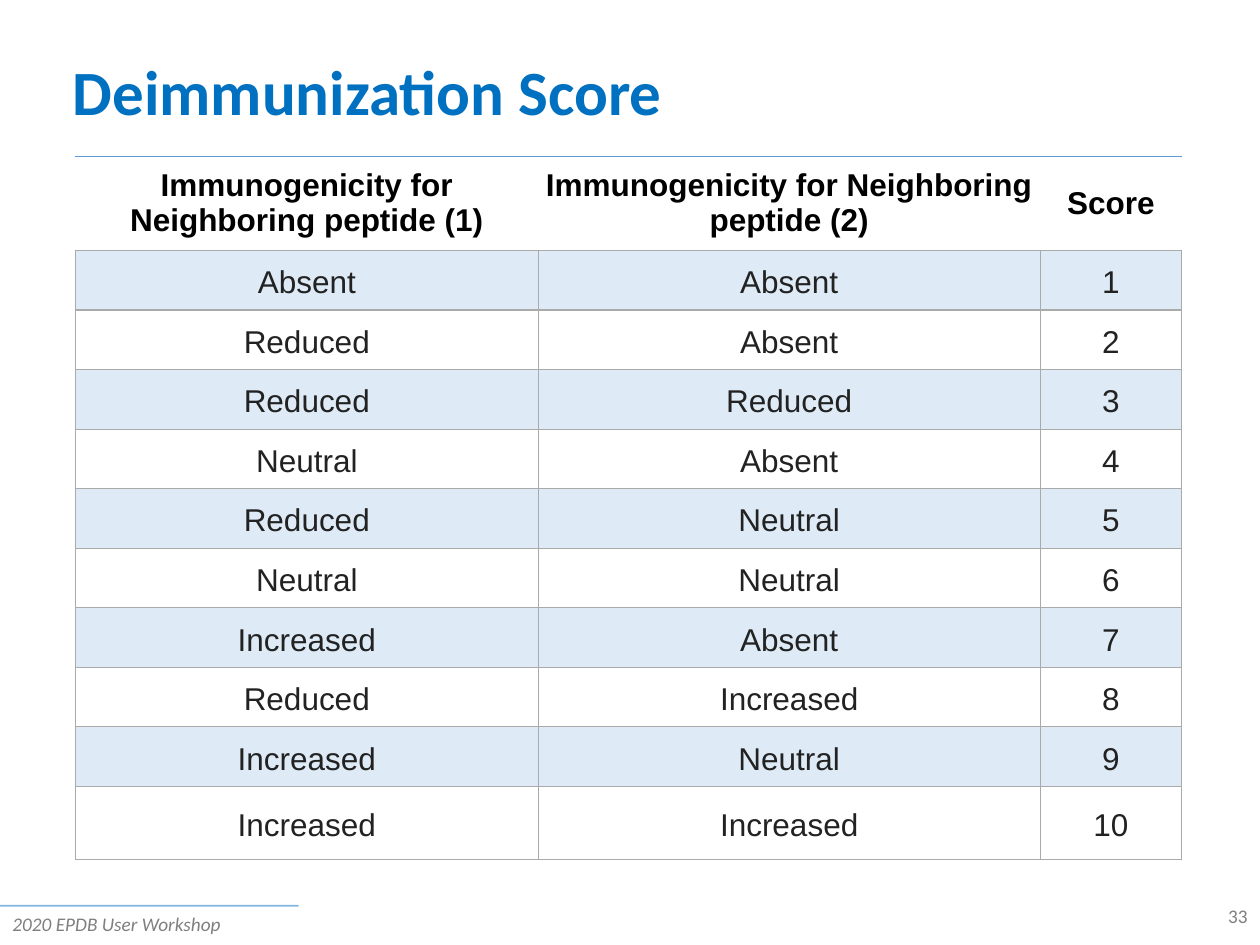
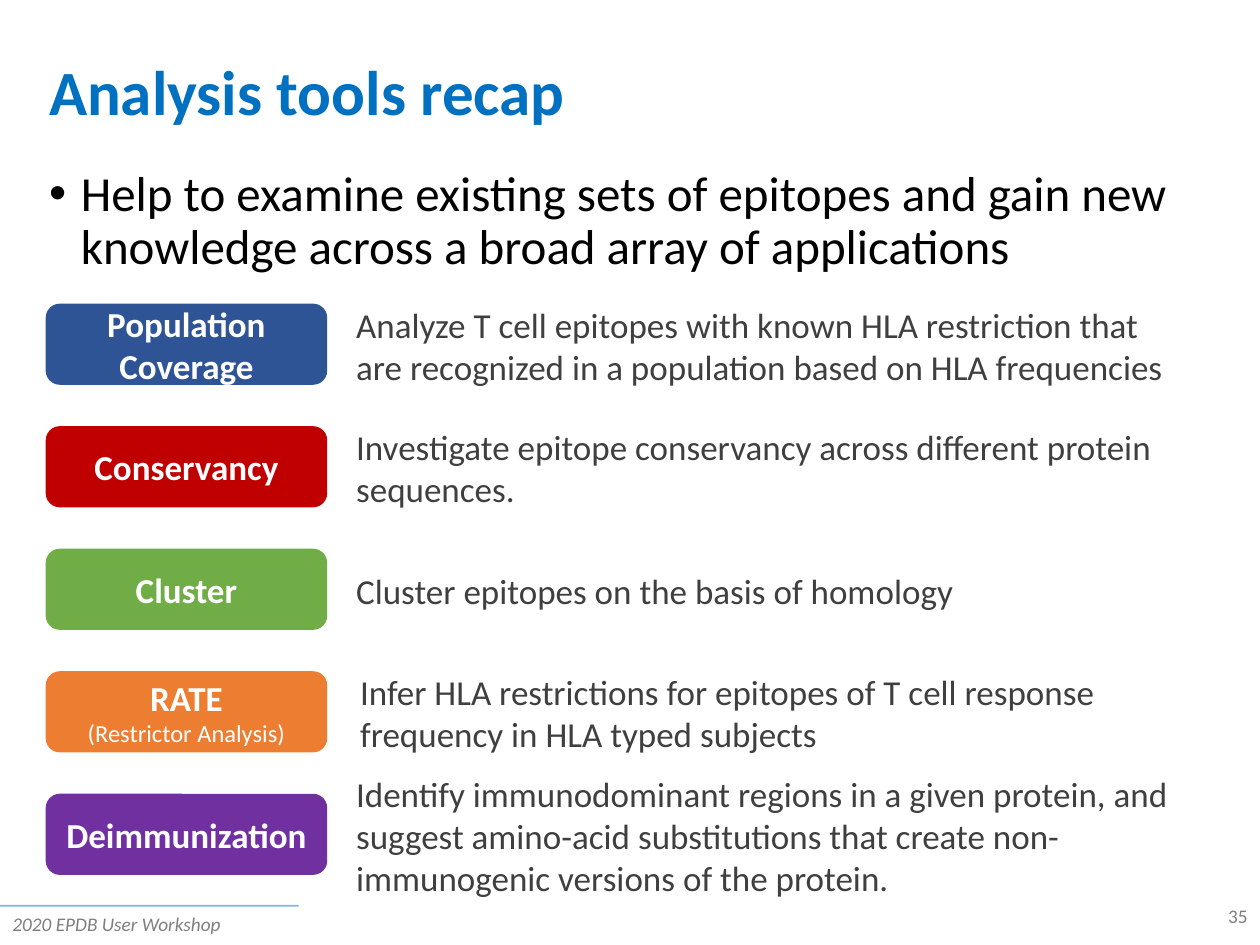
from lxml.etree import SubElement
from pptx import Presentation
from pptx.dml.color import RGBColor
from pptx.enum.shapes import MSO_CONNECTOR, MSO_SHAPE
from pptx.enum.text import MSO_ANCHOR, PP_ALIGN
from pptx.oxml.ns import qn
from pptx.util import Cm, Pt

COLORS = {
    "title": "0070C0",
    "black": "000000",
    "white": "FFFFFF",
    "footer": "7F7F7F",
    "description": "3F3F3F",
    "cell": "222222",
    "band": "5B9BD5",
    "grid": "AAAAAA",
    "navy": "2F5496",
    "red": "C00000",
    "green": "70AD47",
    "orange": "ED7D31",
    "purple": "7030A0",
}
RIGHT_EDGE = 24.64
FOOTER_TOP = 18.26
FOOTER_WIDTH = 6.02
FOOTER_HEIGHT = 0.71

HEADINGS = [
    "Immunogenicity for Neighboring peptide (1)",
    "Immunogenicity for Neighboring peptide (2)",
    "Score",
]
PEPTIDE_PAIRS = [
    ("Absent", "Absent"),
    ("Reduced", "Absent"),
    ("Reduced", "Reduced"),
    ("Neutral", "Absent"),
    ("Reduced", "Neutral"),
    ("Neutral", "Neutral"),
    ("Increased", "Absent"),
    ("Reduced", "Increased"),
    ("Increased", "Neutral"),
    ("Increased", "Increased"),
]
TOOLS = [
    ("Population Coverage", None, "navy", 6.93,
     "Analyze T cell epitopes with known HLA restriction that are recognized "
     "in a population based on HLA frequencies"),
    ("Conservancy", None, "red", 6.93,
     "Investigate epitope conservancy across different protein sequences."),
    ("Cluster", None, "green", 6.93,
     "Cluster epitopes on the basis of homology"),
    ("RATE", "(Restrictor Analysis)", "orange", 7.01,
     "Infer HLA restrictions for epitopes of T cell response frequency in HLA "
     "typed subjects"),
    ("Deimmunization", None, "purple", 6.93,
     "Identify immunodominant regions in a given protein, and suggest "
     "amino-acid substitutions that create non-immunogenic versions of the protein."),
]


def rgb(name):
    return RGBColor.from_string(COLORS[name])


def set_opacity(element, percent):
    for color in element.iter(qn("a:srgbClr")):
        SubElement(color, qn("a:alpha"), val=str(percent * 1000))


def add_span(para, text, size, color, bold=False, italic=False, font="Calibri"):
    span = para.add_run()
    span.text = text
    span.font.name = font
    span.font.size = Pt(size)
    span.font.color.rgb = rgb(color)
    span.font.bold = bold
    span.font.italic = italic


def add_text(page, left, top, width, height, text, size, color,
             align=PP_ALIGN.LEFT, anchor=MSO_ANCHOR.TOP, spacing=1.0, **style):
    box = page.shapes.add_textbox(Cm(left), Cm(top), Cm(width), Cm(height))
    box.text_frame.word_wrap = True
    box.text_frame.vertical_anchor = anchor
    para = box.text_frame.paragraphs[0]
    para.alignment = align
    para.line_spacing = spacing
    add_span(para, text, size, color, **style)
    return para


def add_bullet(para):
    properties = para._p.get_or_add_pPr()
    properties.set("marL", str(Cm(0.64)))
    properties.set("indent", str(-Cm(0.64)))
    SubElement(properties, qn("a:buFont"), typeface="Arial")
    SubElement(properties, qn("a:buChar"), char="•")


def add_footer(page, number):
    rule = page.shapes.add_connector(
        MSO_CONNECTOR.STRAIGHT, 0, Cm(FOOTER_TOP), Cm(FOOTER_WIDTH), Cm(FOOTER_TOP))
    rule.line.color.rgb = rgb("title")
    rule.line.width = Pt(1)
    set_opacity(rule._element, 50)
    SubElement(rule._element.spPr, qn("a:effectLst"))
    add_text(page, 19.69, 18.11, 5.71, FOOTER_HEIGHT, str(number), 11, "footer",
             align=PP_ALIGN.RIGHT)
    add_text(page, 0, FOOTER_TOP, FOOTER_WIDTH, FOOTER_HEIGHT,
             "2020 EPDB User Workshop", 11, "footer", italic=True)


def add_page(deck, title, title_left, number):
    page = deck.slides.add_slide(deck.slide_layouts[6])
    add_footer(page, number)
    add_text(page, title_left, 0.69, RIGHT_EDGE - title_left, 2.46, title, 36, "title",
             anchor=MSO_ANCHOR.MIDDLE, spacing=0.9, bold=True)
    return page


def set_borders(cell, borders):
    properties = cell._tc.get_or_add_tcPr()
    for side in "LRTB":
        color, width = borders.get(side, ("grid", 0.75))
        line = SubElement(properties, qn(f"a:ln{side}"), w=str(Pt(width)))
        if color:
            fill = SubElement(line, qn("a:solidFill"))
            SubElement(fill, qn("a:srgbClr"), val=COLORS[color])
        else:
            SubElement(line, qn("a:noFill"))


def fill_cell(cell, text, margin, color, spacing, bold, borders, banded):
    cell.margin_left = cell.margin_right = Cm(margin)
    cell.margin_top = cell.margin_bottom = Cm(margin)
    cell.vertical_anchor = MSO_ANCHOR.MIDDLE
    para = cell.text_frame.paragraphs[0]
    para.alignment = PP_ALIGN.CENTER
    para.line_spacing = spacing
    add_span(para, text, 18, color, bold=bold, font="Arial")
    if banded:
        cell.fill.solid()
        cell.fill.fore_color.rgb = rgb("band")
        set_opacity(cell._tc.tcPr, 20)
    else:
        cell.fill.background()
    borders_before_fill(cell, borders)


def borders_before_fill(cell, borders):
    properties = cell._tc.tcPr
    fill = properties[0]
    set_borders(cell, borders)
    properties.append(fill)


def add_score_table(page):
    widths = [9.33, 10.12, 2.85]
    heights = [1.9] + [1.2] * (len(PEPTIDE_PAIRS) - 1) + [1.47]
    table = page.shapes.add_table(
        len(heights), len(widths), Cm(1.52), Cm(3.15),
        Cm(sum(widths)), Cm(sum(heights))).table
    table.first_row = False
    table.horz_banding = False
    for column, width in zip(table.columns, widths):
        column.width = Cm(width)
    for row, height in zip(table.rows, heights):
        row.height = Cm(height)

    heading_borders = {"L": (None, 0), "R": (None, 0), "T": ("band", 1)}
    for column, heading in enumerate(HEADINGS):
        fill_cell(table.cell(0, column), heading, 0.03, "black", 1.0, True,
                  heading_borders, False)
    for score, pair in enumerate(PEPTIDE_PAIRS, start=1):
        for column, text in enumerate([*pair, str(score)]):
            fill_cell(table.cell(score, column), text, 0.13, "cell", 1.15, False,
                      {}, score % 2 == 1)


def add_tool_label(page, top, height, name, subtitle, color):
    label = page.shapes.add_shape(
        MSO_SHAPE.ROUNDED_RECTANGLE, Cm(0.94), Cm(top), Cm(5.64), Cm(height))
    label.shadow.inherit = False
    label.fill.solid()
    label.fill.fore_color.rgb = rgb(color)
    label.line.color.rgb = rgb(color)
    label.line.width = Pt(1)
    frame = label.text_frame
    frame.word_wrap = True
    frame.vertical_anchor = MSO_ANCHOR.MIDDLE
    para = frame.paragraphs[0]
    para.alignment = PP_ALIGN.CENTER
    add_span(para, name, 20, "white", bold=True)
    if subtitle:
        para = frame.add_paragraph()
        para.alignment = PP_ALIGN.CENTER
        add_span(para, subtitle, 14, "white")


def add_tools(page):
    first_top, pitch, label_height = 6.14, 2.47, 1.6
    for index, (name, subtitle, color, left, description) in enumerate(TOOLS):
        top = first_top + index * pitch
        add_tool_label(page, top, label_height, name, subtitle, color)
        add_text(page, left, top - 0.16, 17.09, 1.96, description, 20, "description",
                 anchor=MSO_ANCHOR.MIDDLE)


def main():
    deck = Presentation()
    deck.slide_width = Cm(25.4)
    deck.slide_height = Cm(19.05)

    score_page = add_page(deck, "Deimmunization Score", 1.22, 33)
    add_score_table(score_page)

    recap_page = add_page(deck, "Analysis tools recap", 0.74, 35)
    add_bullet(add_text(
        recap_page, 0.74, 3.28, RIGHT_EDGE - 0.74, 2.46,
        "Help to examine existing sets of epitopes and gain new knowledge across "
        "a broad array of applications", 28, "black", spacing=0.9))
    add_tools(recap_page)

    deck.save("out.pptx")


if __name__ == "__main__":
    main()
